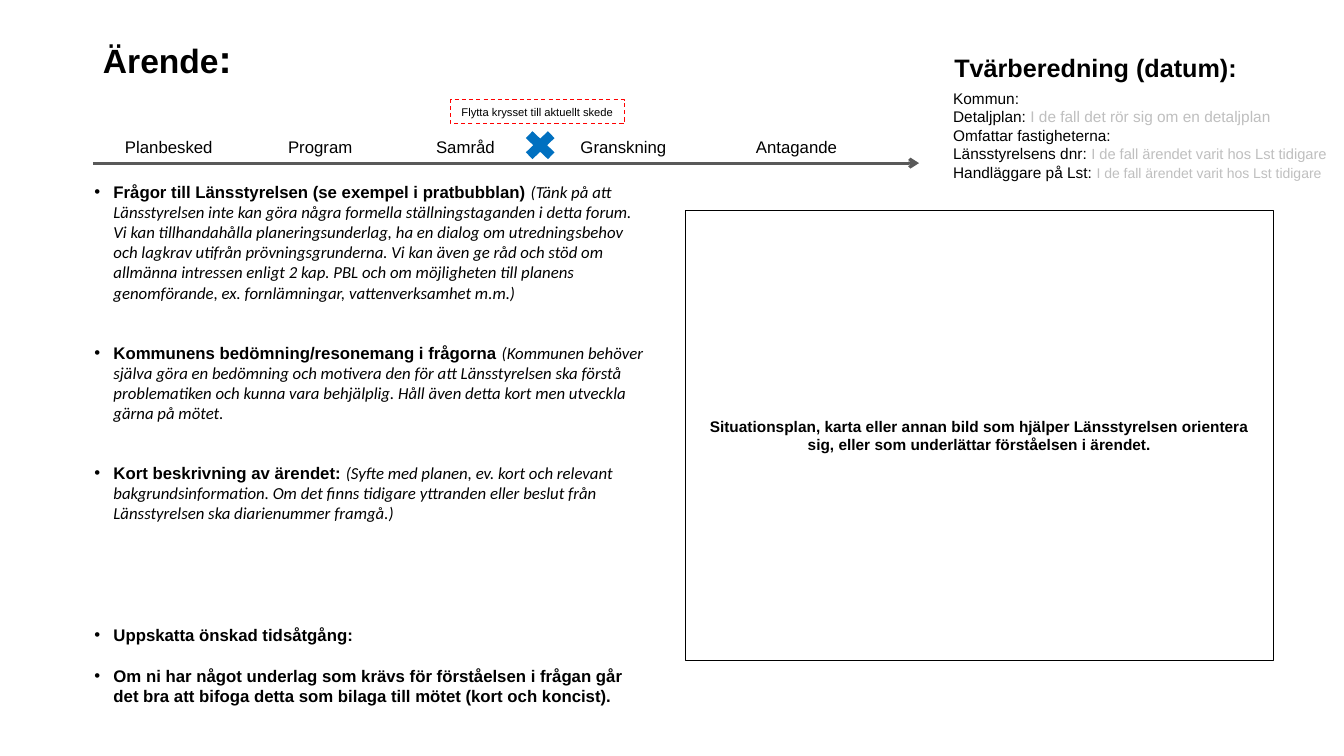
from lxml import etree
from pptx import Presentation
from pptx.dml.color import RGBColor
from pptx.enum.dml import MSO_LINE
from pptx.enum.shapes import MSO_CONNECTOR, MSO_SHAPE
from pptx.enum.text import MSO_ANCHOR, MSO_AUTO_SIZE, PP_ALIGN
from pptx.oxml.ns import qn
from pptx.util import Cm, Pt

RECT, CROSS = MSO_SHAPE.RECTANGLE, MSO_SHAPE.MATH_MULTIPLY
STRAIGHT, DASH = MSO_CONNECTOR.STRAIGHT, MSO_LINE.DASH
LEFT, CENTER = PP_ALIGN.LEFT, PP_ALIGN.CENTER
TOP, MIDDLE, FIXED = MSO_ANCHOR.TOP, MSO_ANCHOR.MIDDLE, MSO_AUTO_SIZE.NONE

COLORS = {"ink": "000000", "hint": "BFBFBF", "axis": "595959",
          "mark": "0070C0", "note": "FF0000"}

STAGES = [("Planbesked", 2.9), ("Program", 7.01), ("Samråd", 10.74),
          ("Granskning", 14.38), ("Antagande", 18.8)]

FACTS = [
    ("Kommun:", "", 11),
    ("Detaljplan: ", "I de fall det rör sig om en detaljplan", 11),
    ("Omfattar fastigheterna:", "", 11),
    ("Länsstyrelsens dnr: ", "I de fall ärendet varit hos Lst tidigare", 10.5),
    ("Handläggare på Lst: ", "I de fall ärendet varit hos Lst tidigare", 10),
]

POINTS = [
    ("Frågor till Länsstyrelsen (se exempel i pratbubblan) ",
     "(Tänk på att Länsstyrelsen inte kan göra några formella ställningstaganden "
     "i detta forum. Vi kan tillhandahålla planeringsunderlag, ha en dialog om "
     "utredningsbehov och lagkrav utifrån prövningsgrunderna. Vi kan även ge råd "
     "och stöd om allmänna intressen enligt 2 kap. PBL och om möjligheten till "
     "planens genomförande, ex. fornlämningar, vattenverksamhet m.m.)", 0),
    ("Kommunens bedömning/resonemang i frågorna ",
     "(Kommunen behöver själva göra en bedömning och motivera den för att "
     "Länsstyrelsen ska förstå problematiken och kunna vara behjälplig. Håll även "
     "detta kort men utveckla gärna på mötet.", 28.5),
    ("Kort beskrivning av ärendet: ",
     "(Syfte med planen, ev. kort och relevant bakgrundsinformation. Om det finns "
     "tidigare yttranden eller beslut från Länsstyrelsen ska diarienummer framgå.)",
     28.5),
    ("Uppskatta önskad tidsåtgång:", "", 72.5),
    ("Om ni har något underlag som krävs för förståelsen i frågan går det bra att "
     "bifoga detta som bilaga till mötet (kort och koncist).", "", 15),
]


def tint(name):
    return RGBColor.from_string(COLORS[name])


def write(para, text, size=12, face="Arial", color="ink", bold=False, italic=False):
    run = para.add_run()
    run.text = text
    font = run.font
    font.size, font.name = Pt(size), face
    font.bold, font.italic = bold, italic
    font.color.rgb = tint(color)


class Board:
    def __init__(self, deck):
        self.slide = deck.slides.add_slide(deck.slide_layouts[5])
        self.shapes = self.slide.shapes

    def title(self, x, y, w, h):
        head = self.shapes.title
        head.left, head.top, head.width, head.height = Cm(x), Cm(y), Cm(w), Cm(h)
        frame = head.text_frame
        frame.auto_size, frame.vertical_anchor = FIXED, TOP
        para = frame.paragraphs[0]
        para.alignment, para.line_spacing = LEFT, 0.9
        return para

    def text(self, x, y, w, h):
        frame = self.shapes.add_textbox(Cm(x), Cm(y), Cm(w), Cm(h)).text_frame
        frame.word_wrap = True
        return frame

    def shape(self, kind, x, y, w, h, fill=None, line=None, width=1, dash=None):
        form = self.shapes.add_shape(kind, Cm(x), Cm(y), Cm(w), Cm(h))
        form.shadow.inherit = False
        if fill:
            form.fill.solid()
            form.fill.fore_color.rgb = tint(fill)
        else:
            form.fill.background()
        if line:
            form.line.color.rgb = tint(line)
            form.line.width = Pt(width)
            form.line.dash_style = dash
        else:
            form.line.fill.background()
        return form

    def label(self, form, text, **style):
        frame = form.text_frame
        frame.word_wrap, frame.vertical_anchor = True, MIDDLE
        para = frame.paragraphs[0]
        para.alignment = CENTER
        write(para, text, **style)

    def arrow(self, x, y, end, color, width):
        link = self.shapes.add_connector(STRAIGHT, Cm(x), Cm(y), Cm(end), Cm(y))
        link.line.color.rgb = tint(color)
        link.line.width = Pt(width)
        etree.SubElement(link.line._get_or_add_ln(), qn("a:tailEnd"), type="arrow")
        etree.SubElement(link._element.spPr, qn("a:effectLst"))

    def row(self, frame, first):
        return frame.paragraphs[0] if first else frame.add_paragraph()

    def bullet(self, para):
        props = para._p.get_or_add_pPr()
        props.set("marL", str(Cm(0.48)))
        props.set("indent", str(-Cm(0.48)))
        etree.SubElement(props, qn("a:buFont"), typeface="Arial")
        etree.SubElement(props, qn("a:buChar"), char="•")


def main():
    deck = Presentation()
    deck.slide_width, deck.slide_height = Cm(33.87), Cm(19.05)
    board = Board(deck)

    head = board.title(2.34, 0.86, 20.83, 2.46)
    write(head, "Ärende", size=24, bold=True)
    write(head, ":", size=28, bold=True)

    plan = board.shape(RECT, 17.27, 5.31, 14.83, 11.33, line="ink")
    board.label(plan, "Situationsplan, karta eller annan bild som hjälper Länsstyrelsen "
                "orientera sig, eller som underlättar förståelsen i ärendet.",
                size=11, bold=True)

    facts = board.text(23.77, 2.11, 10.1, 3.1)
    for i, (name, hint, size) in enumerate(FACTS):
        para = board.row(facts, i == 0)
        write(para, name, size=11)
        if hint:
            write(para, hint, size=size, color="hint")

    board.arrow(2.34, 4.11, 23.16, "axis", 2.25)
    for stage, x in STAGES:
        write(board.text(x, 3.33, 4.09, 0.76).paragraphs[0], stage)

    points = board.text(2.13, 4.45, 14.4, 14.2)
    for i, (lead, help_text, gap) in enumerate(POINTS):
        para = board.row(points, i == 0)
        board.bullet(para)
        if gap:
            para.space_before = Pt(gap)
        write(para, lead, bold=True)
        if help_text:
            write(para, help_text, face="Calibri", italic=True)

    board.shape(CROSS, 13.08, 3.15, 1.07, 1.02, fill="mark")
    note = board.shape(RECT, 11.35, 2.51, 4.39, 0.61, line="note", width=0.75, dash=DASH)
    board.label(note, "Flytta krysset till aktuellt skede", size=8)

    date = board.text(23.8, 1.27, 9.9, 1.1).paragraphs[0]
    date.line_spacing = 0.9
    write(date, "Tvärberedning (datum):", size=18, bold=True)

    deck.save("out.pptx")


if __name__ == "__main__":
    main()
